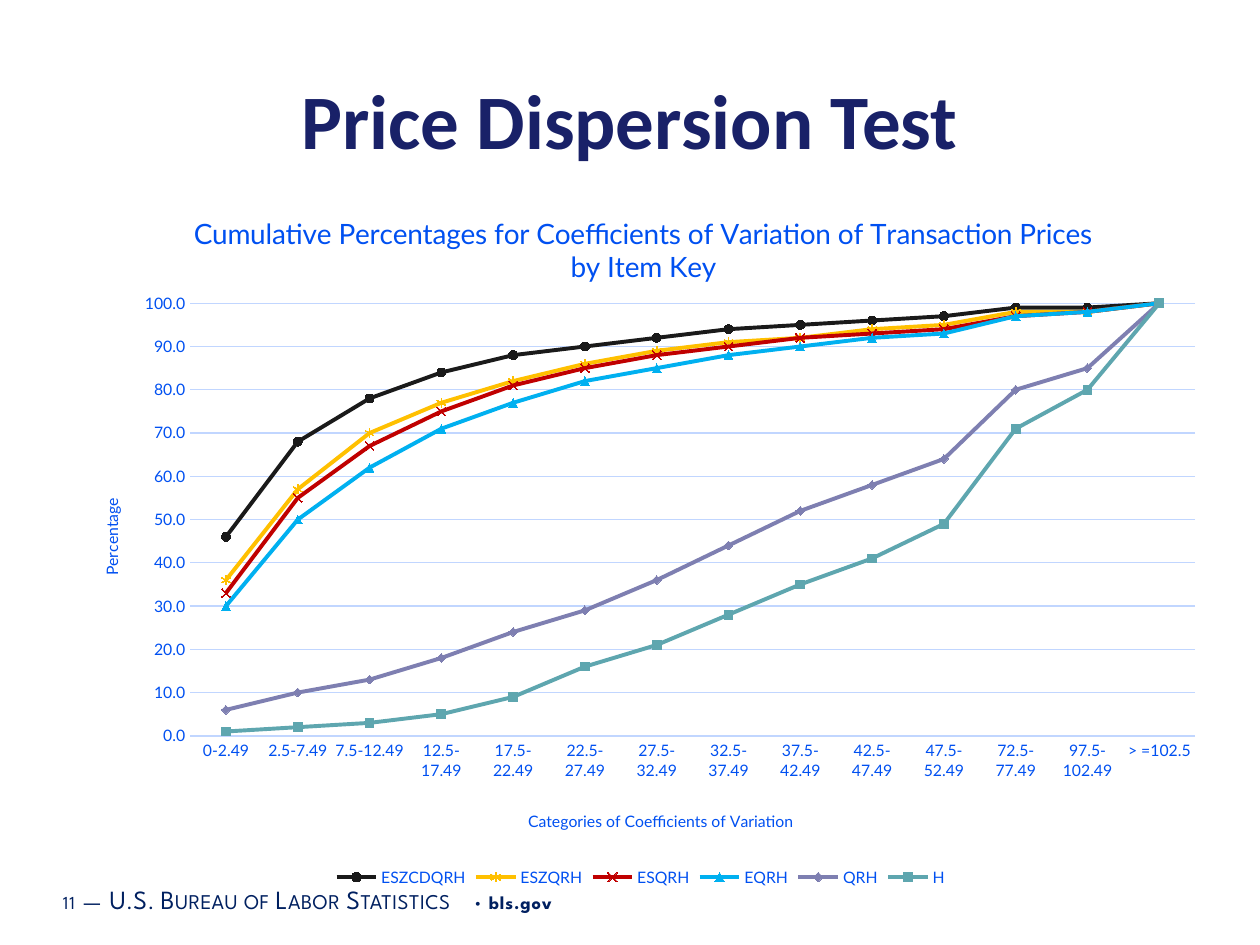
from dataclasses import dataclass

import pptx
import pptx.chart.data
import pptx.dml.color
import pptx.enum.chart
import pptx.enum.text
import pptx.oxml
import pptx.oxml.ns
import pptx.util
from pptx.dml.color import RGBColor
from pptx.enum.chart import XL_MARKER_STYLE
from pptx.util import Inches, Pt

NAVY = RGBColor(0x00, 0x20, 0x60)
TITLE_BLUE = RGBColor(0x19, 0x21, 0x68)
LABEL_BLUE = RGBColor(0x00, 0x50, 0xF1)
GRID_BLUE = RGBColor(0xC1, 0xD6, 0xFF)
BLACK = RGBColor(0x1A, 0x1A, 0x1A)
GOLD = RGBColor(0xFF, 0xC0, 0x00)
RED = RGBColor(0xC0, 0x00, 0x00)
CYAN = RGBColor(0x00, 0xB0, 0xF0)
VIOLET = RGBColor(0x7E, 0x7F, 0xB1)
TEAL = RGBColor(0x5E, 0xA6, 0xAF)
DARK_VIOLET = RGBColor(0x3E, 0x3F, 0x67)
GREEN = RGBColor(0x92, 0xD0, 0x50)
DARK_TEAL = RGBColor(0x24, 0x44, 0x48)

CATEGORIES = [
    "0-2.49", "2.5-7.49", "7.5-12.49", "12.5-17.49", "17.5-22.49",
    "22.5-27.49", "27.5-32.49", "32.5-37.49", "37.5-42.49", "42.5-47.49",
    "47.5-52.49", "72.5-77.49", "97.5-102.49", "> =102.5",
]


@dataclass
class ItemKey:
    name: str
    percentages: list[int]
    color: RGBColor
    marker: XL_MARKER_STYLE
    marker_fill: RGBColor | None = None


@dataclass
class FooterRun:
    text: str
    size: float
    spacing: float = 0.5
    small_caps: bool = False
    bold: bool = False


ITEM_KEYS = [
    ItemKey("ESZCDQRH", [46, 68, 78, 84, 88, 90, 92, 94, 95, 96, 97, 99, 99, 100],
            BLACK, XL_MARKER_STYLE.CIRCLE, DARK_VIOLET),
    ItemKey("ESZQRH", [36, 57, 70, 77, 82, 86, 89, 91, 92, 94, 95, 98, 98, 100],
            GOLD, XL_MARKER_STYLE.STAR),
    ItemKey("ESQRH", [33, 55, 67, 75, 81, 85, 88, 90, 92, 93, 94, 97, 98, 100],
            RED, XL_MARKER_STYLE.X),
    ItemKey("EQRH", [30, 50, 62, 71, 77, 82, 85, 88, 90, 92, 93, 97, 98, 100],
            CYAN, XL_MARKER_STYLE.TRIANGLE, CYAN),
    ItemKey("QRH", [6, 10, 13, 18, 24, 29, 36, 44, 52, 58, 64, 80, 85, 100],
            VIOLET, XL_MARKER_STYLE.DIAMOND, GREEN),
    ItemKey("H", [1, 2, 3, 5, 9, 16, 21, 28, 35, 41, 49, 71, 80, 100],
            TEAL, XL_MARKER_STYLE.SQUARE, DARK_TEAL),
]

FOOTER = [
    FooterRun("11", 10.5),
    FooterRun(" ", 16),
    FooterRun("—", 15, 0.3, small_caps=True),
    FooterRun(" ", 16),
    FooterRun("U.S. Bureau of Labor Statistics", 15, 0.3, small_caps=True),
    FooterRun(" • ", 10.5),
    FooterRun("bls.gov", 10.5, bold=True),
]


def style_font(font, name: str, size: float, color: RGBColor, bold: bool = False) -> None:
    font.name = name
    font.size = Pt(size)
    font.bold = bold
    font.color.rgb = color


def add_text_frame(slide, left: float, top: float, width: float, height: float):
    frame = slide.shapes.add_textbox(
        Inches(left), Inches(top), Inches(width), Inches(height)).text_frame
    frame.word_wrap = True
    frame.vertical_anchor = pptx.enum.text.MSO_ANCHOR.MIDDLE
    return frame


def add_heading(slide) -> None:
    frame = add_text_frame(slide, 0.5, 0.5, 9, 0.88)
    frame.text = "Price Dispersion Test"
    heading = frame.paragraphs[0]
    heading.alignment = pptx.enum.text.PP_ALIGN.CENTER
    style_font(heading.runs[0].font, "Calibri", 44, TITLE_BLUE, bold=True)


def add_footer(slide) -> None:
    frame = add_text_frame(slide, 0.43, 6.93, 6.33, 0.4)
    frame.margin_left = frame.margin_right = Inches(0.07)
    frame.margin_top = frame.margin_bottom = Inches(0.04)
    for part in FOOTER:
        run = frame.paragraphs[0].add_run()
        run.text = part.text
        style_font(run.font, "League Spartan", part.size, NAVY, part.bold)
        properties = run._r.get_or_add_rPr()
        properties.set("spc", str(round(part.spacing * 100)))
        if part.small_caps:
            properties.set("cap", "small")


def manual_layout(**settings: str | float):
    values = "".join(f'<c:{tag} val="{value}"/>' for tag, value in settings.items())
    return pptx.oxml.parse_xml(
        f'<c:layout {pptx.oxml.ns.nsdecls("c")}>'
        f"<c:manualLayout>{values}</c:manualLayout></c:layout>")


def place_plot(chart, x: float, y: float, w: float, h: float) -> None:
    """Fix the inner plot area as fractions of the chart."""
    plot_area = chart._chartSpace.chart.plotArea
    for layout in plot_area.findall(pptx.oxml.ns.qn("c:layout")):
        plot_area.remove(layout)
    plot_area.insert(0, manual_layout(
        layoutTarget="inner", xMode="edge", yMode="edge", x=x, y=y, w=w, h=h))


def set_title(title, lines: list[str], size: float, x: float, y: float) -> None:
    """Write a chart or axis title with its top left at fractions of the chart."""
    frame = title.text_frame
    frame.text = "\n".join(lines)
    for paragraph in frame.paragraphs:
        style_font(paragraph.runs[0].font, "Lato", size, LABEL_BLUE)
    element = title._element
    for layout in element.findall(pptx.oxml.ns.qn("c:layout")):
        element.remove(layout)
    element.find(pptx.oxml.ns.qn("c:tx")).addnext(
        manual_layout(xMode="edge", yMode="edge", x=x, y=y))


def style_line(line, color: RGBColor, width: float) -> None:
    line.color.rgb = color
    line.width = Pt(width)


def style_series(series, key: ItemKey) -> None:
    series.smooth = False
    style_line(series.format.line, key.color, 2.25)
    series.marker.style = key.marker
    series.marker.size = 5
    marker = series.marker.format
    if key.marker_fill is None:
        marker.fill.background()
    else:
        marker.fill.solid()
        marker.fill.fore_color.rgb = key.marker_fill
    style_line(marker.line, key.color, 0.75)


def add_dispersion_chart(slide) -> None:
    data = pptx.chart.data.CategoryChartData(number_format="0.0")
    data.categories = CATEGORIES
    for key in ITEM_KEYS:
        data.add_series(key.name, key.percentages)
    chart = slide.shapes.add_chart(
        pptx.enum.chart.XL_CHART_TYPE.LINE_MARKERS,
        Inches(0.5), Inches(1.45), Inches(9.17), Inches(5.63), data).chart
    style_font(chart.font, "Lato", 10, NAVY)
    chart.plots[0].vary_by_categories = False
    for series, key in zip(chart.plots[0].series, ITEM_KEYS):
        style_series(series, key)

    categories, percentages = chart.category_axis, chart.value_axis
    for axis in (categories, percentages):
        axis.major_tick_mark = axis.minor_tick_mark = pptx.enum.chart.XL_TICK_MARK.NONE
        style_font(axis.tick_labels.font, "Lato", 9, LABEL_BLUE)
    style_line(categories.format.line, GRID_BLUE, 0.75)
    percentages.format.line.fill.background()
    percentages.minimum_scale, percentages.maximum_scale = 0, 100
    percentages.major_unit = 10
    percentages.tick_labels.number_format = "0.0"
    percentages.tick_labels.number_format_is_linked = False
    style_line(percentages.major_gridlines.format.line, GRID_BLUE, 0.75)

    set_title(chart.chart_title,
              ["Cumulative Percentages for Coefficients of Variation of Transaction Prices",
               "by Item Key"], 16, 0.11, 0.04)
    set_title(categories.axis_title, ["Categories of Coefficients of Variation"], 9, 0.4, 0.88)
    set_title(percentages.axis_title, ["Percentage"], 9, 0.03, 0.44)
    percentages.axis_title.text_frame._txBody.bodyPr.set("rot", "-5400000")

    chart.has_legend = True
    chart.legend.position = pptx.enum.chart.XL_LEGEND_POSITION.BOTTOM
    chart.legend.include_in_layout = False
    style_font(chart.legend.font, "Lato", 9, LABEL_BLUE)
    place_plot(chart, 0.11, 0.17, 0.87, 0.61)


def main() -> None:
    deck = pptx.Presentation()
    deck.slide_width, deck.slide_height = Inches(10), Inches(7.5)
    slide = deck.slides.add_slide(deck.slide_layouts[6])
    add_footer(slide)
    add_heading(slide)
    add_dispersion_chart(slide)
    deck.save("out.pptx")


if __name__ == "__main__":
    main()
